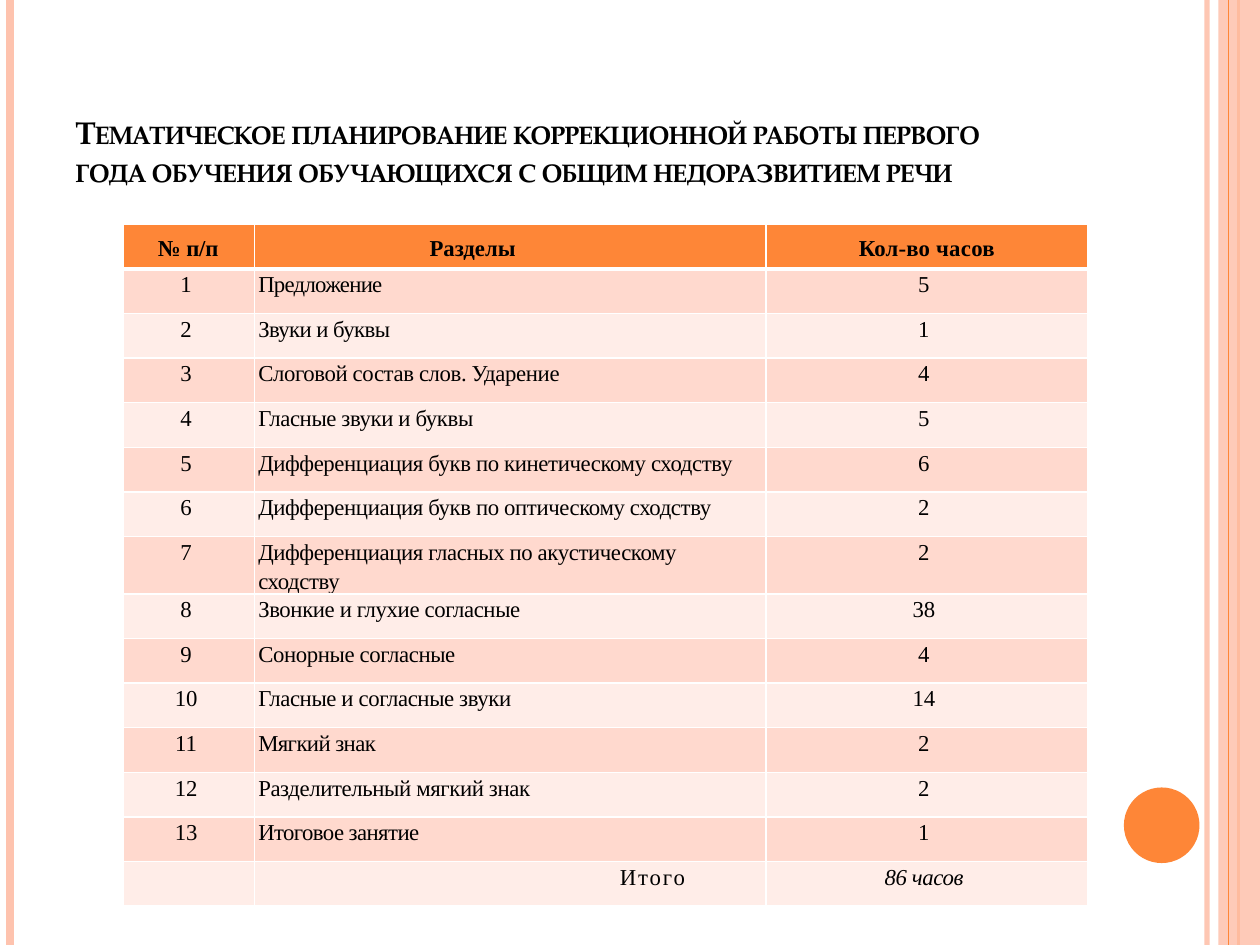
import copy

import pptx
import pptx.dml.color
import pptx.enum.shapes
import pptx.enum.text
import pptx.oxml.ns
import pptx.util
from lxml import etree
from pptx.util import Inches

RGBColor = pptx.dml.color.RGBColor
Align = pptx.enum.text.PP_ALIGN
Anchor = pptx.enum.text.MSO_ANCHOR
qn = pptx.oxml.ns.qn

BLACK = RGBColor(0x00, 0x00, 0x00)
WHITE = RGBColor(0xFF, 0xFF, 0xFF)
ORANGE = RGBColor(0xFE, 0x86, 0x37)
PEACH = RGBColor(0xFE, 0xC3, 0xAE)
ROW_DARK = RGBColor(0xFF, 0xD9, 0xCE)
ROW_LIGHT = RGBColor(0xFF, 0xED, 0xE8)

TITLE_FONT = "TeX Gyre Pagella"
TABLE_FONT = "Times New Roman"

TITLE = (
    "Тематическое планирование коррекционной работы первого\n"
    "года обучения обучающихся с общим недоразвитием речи"
)
# Section name, hours, letter spacing of the name in points
SECTIONS = [
    ("Предложение", 5, -0.4),
    ("Звуки и буквы", 1, -0.3),
    ("Слоговой состав слов. Ударение", 4, -0.2),
    ("Гласные звуки и буквы", 5, -0.2),
    ("Дифференциация букв по кинетическому сходству", 6, -0.2),
    ("Дифференциация букв по оптическому сходству", 2, -0.2),
    ("Дифференциация гласных по акустическому сходству", 2, -0.2),
    ("Звонкие и глухие согласные", 38, -0.2),
    ("Сонорные согласные", 4, -0.2),
    ("Гласные и согласные звуки", 14, -0.2),
    ("Мягкий знак", 2, -0.3),
    ("Разделительный мягкий знак", 2, -0.2),
    ("Итоговое занятие", 1, -0.3),
]
COLUMN_WIDTHS = (1.04, 4.06, 2.55)
TABLE_HEIGHT = 5.31


def add_text(paragraph, text, font=TABLE_FONT, size=13, bold=False, italic=False,
             spacing=0, small_caps=False, align=Align.LEFT, indent=0, line_spacing=1.15):
    """Append text to the paragraph; a newline becomes a line break."""
    paragraph.alignment = align
    paragraph.line_spacing = line_spacing
    if indent:
        paragraph._p.get_or_add_pPr().set("marL", str(Inches(indent)))
    for index, line in enumerate(text.split("\n")):
        if index:
            paragraph.add_line_break()
        run = paragraph.add_run()
        run.text = line
        run.font.name = font
        run.font.size = pptx.util.Pt(size)
        run.font.bold = bold
        run.font.italic = italic
        run.font.color.rgb = BLACK
        properties = run.font._element
        if spacing:
            properties.set("spc", str(round(spacing * 100)))
        if small_caps:
            properties.set("cap", "small")
        if index:
            run._r.getprevious().append(copy.deepcopy(properties))


def set_opacity(fill_parent, percent):
    color = fill_parent.find(".//" + qn("a:srgbClr"))
    etree.SubElement(color, qn("a:alpha")).set("val", str(percent * 1000))


def add_vertical_line(slide, x, color, width, opacity=100):
    line = slide.shapes.add_connector(
        pptx.enum.shapes.MSO_CONNECTOR.STRAIGHT, Inches(x), 0, Inches(x), Inches(7.5))
    line.line.color.rgb = color
    line.line.width = pptx.util.Pt(width)
    properties = line._element.spPr
    if opacity < 100:
        set_opacity(properties, opacity)
    etree.SubElement(properties, qn("a:effectLst"))


def add_filled_shape(slide, kind, box, color, opacity=100):
    shape = slide.shapes.add_shape(kind, *map(Inches, box))
    shape.shadow.inherit = False
    shape.fill.solid()
    shape.fill.fore_color.rgb = color
    shape.line.fill.background()
    if opacity < 100:
        set_opacity(shape._element.spPr, opacity)


def add_decoration(slide):
    shapes = pptx.enum.shapes.MSO_SHAPE
    add_vertical_line(slide, 9.58, PEACH, 3, opacity=93)
    add_vertical_line(slide, 0.08, PEACH, 4.5)
    add_vertical_line(slide, 9.83, ORANGE, 1.5)
    add_filled_shape(slide, shapes.RECTANGLE, (9.67, 0, 0.33, 7.5), PEACH, opacity=87)
    add_vertical_line(slide, 9.75, ORANGE, 0.75)
    add_filled_shape(slide, shapes.OVAL, (8.92, 6.25, 0.6, 0.6), ORANGE)


def fill_title(slide):
    title = slide.shapes.title
    title.left, title.top, title.width, title.height = map(Inches, (0.5, 0.3, 8.17, 1.25))
    frame = title.text_frame
    frame.word_wrap = True
    frame.auto_size = pptx.enum.text.MSO_AUTO_SIZE.NONE
    frame.vertical_anchor = Anchor.BOTTOM
    add_text(frame.paragraphs[0], TITLE, font=TITLE_FONT, size=18, bold=True,
             small_caps=True, line_spacing=1.0)


def style_cell(cell, color, top=1, bottom=1):
    """Set margins, white borders (widths in points) and fill."""
    cell.margin_left = cell.margin_right = Inches(0.03)
    cell.margin_top = cell.margin_bottom = 0
    properties = cell._tc.get_or_add_tcPr()
    for side, width in (("L", 1), ("R", 1), ("T", top), ("B", bottom)):
        border = etree.SubElement(properties, qn(f"a:ln{side}"), w=str(pptx.util.Pt(width)))
        border_fill = etree.SubElement(border, qn("a:solidFill"))
        etree.SubElement(border_fill, qn("a:srgbClr"), val=str(WHITE))
    cell.fill.solid()
    cell.fill.fore_color.rgb = color


def row_color(row):
    if row == 0:
        return ORANGE
    return ROW_DARK if row % 2 else ROW_LIGHT


def add_plan_table(slide):
    row_count = len(SECTIONS) + 2
    table = slide.shapes.add_table(
        row_count, len(COLUMN_WIDTHS), Inches(0.98), Inches(1.78),
        Inches(sum(COLUMN_WIDTHS)), Inches(TABLE_HEIGHT)).table
    for column, width in zip(table.columns, COLUMN_WIDTHS):
        column.width = Inches(width)
    for index, row in enumerate(table.rows):
        row.height = Inches(TABLE_HEIGHT / row_count)
        for cell in row.cells:
            style_cell(cell, row_color(index), top=3 if index == 1 else 1,
                       bottom=3 if index == 0 else 1)

    def write(row, column, text, **text_format):
        add_text(table.cell(row, column).text_frame.paragraphs[0], text, **text_format)

    for cell in table.rows[0].cells:
        cell.vertical_anchor = Anchor.MIDDLE
    number_header = dict(bold=True, align=Align.CENTER, indent=0.03)
    write(0, 0, "№ ", **number_header)
    write(0, 0, "п/п ", spacing=-0.1, **number_header)
    write(0, 1, "Разделы", bold=True, indent=1.36)
    hours_header = dict(bold=True, align=Align.CENTER, indent=0.05)
    write(0, 2, "Кол-во ", spacing=0.1, **hours_header)
    write(0, 2, "часов ", spacing=0.2, **hours_header)

    for number, (section, hours, spacing) in enumerate(SECTIONS, start=1):
        write(number, 0, f"{number} ", align=Align.CENTER)
        write(number, 1, section, spacing=spacing)
        write(number, 2, f"{hours} ", align=Align.CENTER)

    total_row = row_count - 1
    total_hours = sum(hours for _, hours, _ in SECTIONS)
    write(total_row, 1, "Итого", spacing=1.1, indent=2.87)
    write(total_row, 2, f"{total_hours} часов ", spacing=-0.2, italic=True, align=Align.CENTER)


def main():
    presentation = pptx.Presentation()
    presentation.slide_width = Inches(10)
    presentation.slide_height = Inches(7.5)
    title_only = presentation.slide_layouts[5]
    slide = presentation.slides.add_slide(title_only)
    add_decoration(slide)
    fill_title(slide)
    add_plan_table(slide)
    presentation.save("out.pptx")


if __name__ == "__main__":
    main()
